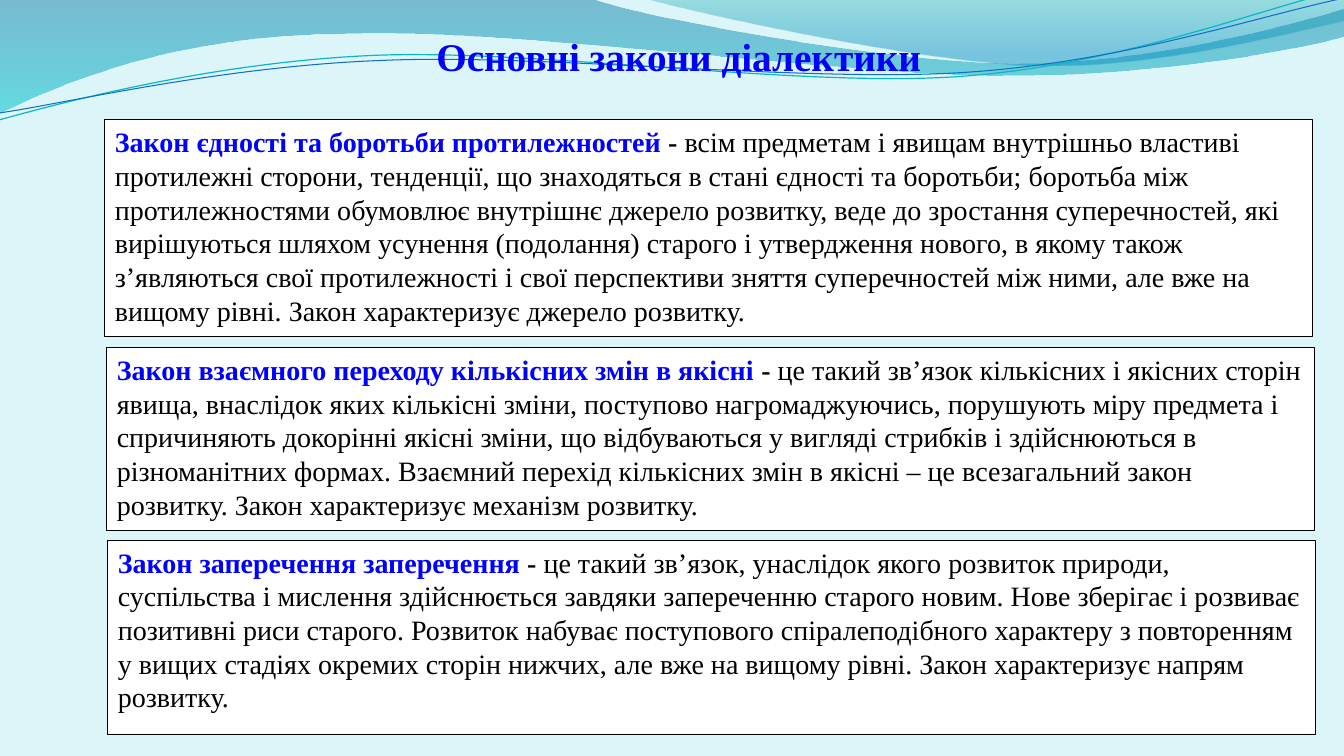
from lxml.etree import SubElement
from pptx import Presentation
from pptx.dml.color import RGBColor
from pptx.enum.shapes import MSO_SHAPE
from pptx.enum.text import MSO_ANCHOR, MSO_AUTO_SIZE, PP_ALIGN
from pptx.oxml.ns import qn
from pptx.util import Inches, Pt

THEME = {
    "font": "Times New Roman",
    "title_size": 28, "body_size": 20, "border_width": 0.75,
    "background": "DBF5F9", "accent": "0000FF", "ink": "000000", "paper": "FFFFFF",
}

TITLE = ("Основні закони діалектики", (4.23, 0.27, 5.34, 0.57))

# name of the law, explanation, (left, top, height) of its box
LAW_WIDTH = 11.98
LAWS = [
    ("Закон єдності та боротьби протилежностей",
     "всім предметам і явищам внутрішньо властиві протилежні сторони, тенденції, що "
     "знаходяться в стані єдності та боротьби; боротьба між протилежностями обумовлює "
     "внутрішнє джерело розвитку, веде до зростання суперечностей, які вирішуються шляхом "
     "усунення (подолання) старого і утвердження нового, в якому також з’являються свої "
     "протилежності і свої перспективи зняття суперечностей між ними, але вже на вищому "
     "рівні. Закон характеризує джерело розвитку.",
     (1.04, 1.19, 2.15)),
    ("Закон взаємного переходу кількісних змін в якісні",
     "це такий зв’язок кількісних і якісних сторін явища, внаслідок яких кількісні зміни, "
     "поступово нагромаджуючись, порушують міру предмета і спричиняють докорінні якісні "
     "зміни, що відбуваються у вигляді стрибків і здійснюються в різноманітних формах. "
     "Взаємний перехід кількісних змін в якісні – це всезагальний закон розвитку. Закон "
     "характеризує механізм розвитку.",
     (1.06, 3.45, 1.81)),
    ("Закон заперечення заперечення",
     "це такий зв’язок, унаслідок якого розвиток природи, суспільства і мислення "
     "здійснюється завдяки запереченню старого новим. Нове зберігає і розвиває позитивні "
     "риси старого. Розвиток набуває поступового спіралеподібного характеру з повторенням "
     "у вищих стадіях окремих сторін нижчих, але вже на вищому рівні. Закон характеризує "
     "напрям розвитку.",
     (1.07, 5.36, 1.93)),
]

# Outlines: a start point, then steps of one point (line) or three points (Bezier curve)
# Gradient stops: position, colour, opacity in percent
WAVES = [
    ([(0, -0.01), [(5.87, -0.01)],
      [(6.34, 0.17), (8.85, 0.63), (10.11, 0.63)],
      [(11.38, 0.63), (12.78, 0.26), (13.33, 0.09)],
      [(13.35, 0.36)],
      [(13.11, 0.44), (11.6, 0.76), (9.94, 0.75)],
      [(8.29, 0.75), (5.09, 0.28), (3.43, 0.34)],
      [(1.72, 0.35), (0.61, 0.83), (-0.01, 1.13)]],
     [(0, "0074A1", 45), (1, "00C6CF", 55)]),
    ([(6.39, -0.01),
      [(6.79, 0.11), (9.09, 0.62), (10.25, 0.65)],
      [(11.41, 0.69), (12.82, 0.32), (13.33, 0.21)],
      [(13.33, 0)]],
     [(0, "00A1A9", 30), (0.8, "008BBF", 45)]),
]
RIPPLES = [
    ([(-0.01, 1.19),
      [(0.64, 1.01), (2.11, 0.62), (3.69, 0.55)],
      [(5.27, 0.48), (7.9, 0.87), (9.5, 0.76)],
      [(11.1, 0.65), (12.52, 0.08), (13.31, -0.1)]],
     "0AB8BF", 0.85),
    ([(0, 1.12),
      [(0.63, 1.03), (2.18, 0.66), (3.78, 0.6)],
      [(5.37, 0.53), (7.96, 0.82), (9.55, 0.72)],
      [(11.15, 0.62), (12.55, 0.14), (13.34, -0.02)]],
     "0F6FC6", 0.75),
]


def rgb(code):
    return RGBColor.from_string(code)


def add_outline(slide, outline, close):
    """Draw straight segments between the end points, then bend the curved ones."""
    start, *steps = outline
    builder = slide.shapes.build_freeform(*map(Inches, start))
    builder.add_line_segments([tuple(map(Inches, step[-1])) for step in steps], close=close)
    shape = builder.convert_to_shape()
    shape.shadow.inherit = False
    segments = list(shape._element.iter(qn("a:lnTo")))
    for segment, step in zip(segments, steps):
        if len(step) == 1:
            continue
        curve = segment.makeelement(qn("a:cubicBezTo"))
        for x, y in step:
            SubElement(curve, qn("a:pt"), x=str(Inches(x) - shape.left),
                       y=str(Inches(y) - shape.top))
        segment.getparent().replace(segment, curve)
    return shape


def add_wave(slide, outline, stops):
    wave = add_outline(slide, outline, True)
    wave.line.fill.background()
    wave.fill.gradient()
    wave.fill.gradient_angle = 270
    for stop, (position, color, _) in zip(wave.fill.gradient_stops, stops):
        stop.position = position
        stop.color.rgb = rgb(color)
    tints = wave.fill._xPr.iter(qn("a:srgbClr"))
    for tint, (_, _, opacity) in zip(tints, stops):
        SubElement(tint, qn("a:alpha"), val=str(opacity * 1000))


def add_ripple(slide, outline, color, width):
    ripple = add_outline(slide, outline, False)
    ripple.fill.background()
    ripple.line.color.rgb = rgb(color)
    ripple.line.width = Pt(width)


def add_run(paragraph, text, size, color, bold):
    run = paragraph.add_run()
    run.text = text
    formats = {"name": THEME["font"], "size": Pt(size), "bold": bold}
    for attribute, value in formats.items():
        setattr(run.font, attribute, value)
    run.font.color.rgb = rgb(color)


def add_title(slide, text, place):
    frame = slide.shapes.add_textbox(*map(Inches, place)).text_frame
    frame.word_wrap = True
    frame.auto_size = MSO_AUTO_SIZE.SHAPE_TO_FIT_TEXT
    add_run(frame.paragraphs[0], text, THEME["title_size"], THEME["accent"], True)


def add_law(slide, name, explanation, place):
    left, top, height = place
    box = slide.shapes.add_shape(MSO_SHAPE.RECTANGLE,
                                 *map(Inches, (left, top, LAW_WIDTH, height)))
    box.shadow.inherit = False
    box.fill.solid()
    box.fill.fore_color.rgb = rgb(THEME["paper"])
    box.line.color.rgb = rgb(THEME["ink"])
    box.line.width = Pt(THEME["border_width"])
    frame = box.text_frame
    frame.word_wrap = True
    frame.vertical_anchor = MSO_ANCHOR.TOP
    paragraph = frame.paragraphs[0]
    paragraph.alignment = PP_ALIGN.LEFT
    for text, color, bold in ((name, "accent", True), (" ‑ ", "ink", True),
                              (explanation, "ink", False)):
        add_run(paragraph, text, THEME["body_size"], THEME[color], bold)


def main():
    deck = Presentation()
    deck.slide_width, deck.slide_height = Inches(13.33), Inches(7.5)
    slide = deck.slides.add_slide(deck.slide_layouts[6])
    slide.background.fill.solid()
    slide.background.fill.fore_color.rgb = rgb(THEME["background"])
    for wave in WAVES:
        add_wave(slide, *wave)
    for ripple in RIPPLES:
        add_ripple(slide, *ripple)
    add_title(slide, *TITLE)
    for law in LAWS:
        add_law(slide, *law)
    deck.save("out.pptx")


if __name__ == "__main__":
    main()
